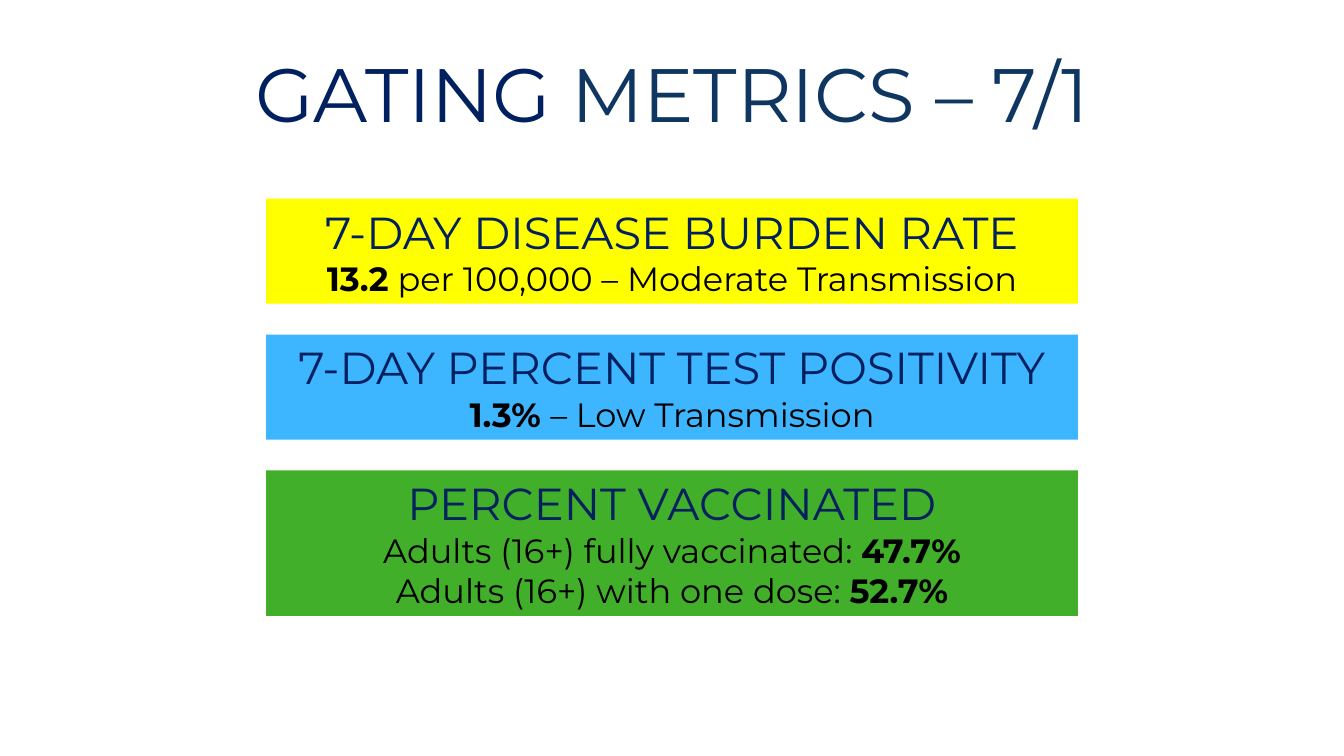
from pptx import Presentation
from pptx.dml.color import RGBColor
from pptx.enum.shapes import MSO_SHAPE
from pptx.enum.text import MSO_ANCHOR, PP_ALIGN
from pptx.util import Pt

RECT = MSO_SHAPE.RECTANGLE
CENTER = PP_ALIGN.CENTER
MIDDLE, BOTTOM = MSO_ANCHOR.MIDDLE, MSO_ANCHOR.BOTTOM

THEME = {
    "font": "Montserrat",
    "navy": "002060", "slate": "0F3660", "black": "000000",
    "yellow": "FFFF00", "blue": "3EB6FF", "green": "42AF2A",
    "title": 54, "heading": 32, "body": 24,
}

PANELS = [
    ("yellow", 75, "7-DAY DISEASE BURDEN RATE",
     [[("13.2", True), (" per 100,000 – Moderate Transmission", False)]]),
    ("blue", 75, "7-DAY PERCENT TEST POSITIVITY",
     [[("1.3% ", True), ("– Low Transmission", False)]]),
    ("green", 104, "PERCENT VACCINATED",
     [[("Adults (16+) fully vaccinated: ", False), ("47.7%", True)],
      [("Adults (16+) with one dose: ", False), ("52.7%", True)]]),
]
PANEL_LEFT, PANEL_TOP, PANEL_WIDTH, PANEL_GAP = 190, 142, 580, 22


def add_run(p, text, size, color, bold=False):
    r = p.add_run()
    r.text = text
    r.font.name = THEME["font"]
    r.font.size = Pt(THEME[size])
    r.font.bold = bold
    r.font.color.rgb = RGBColor.from_string(THEME[color])


prs = Presentation()
prs.slide_width, prs.slide_height = Pt(960), Pt(540)
s = prs.slides.add_slide(prs.slide_layouts[6])

title = s.shapes.add_textbox(Pt(0), Pt(6), Pt(960), Pt(97))
tf = title.text_frame
tf.word_wrap = True
tf.vertical_anchor = BOTTOM
p = tf.paragraphs[0]
p.alignment = CENTER
p.line_spacing = 0.9
add_run(p, "GATING", "title", "navy")
add_run(p, " METRICS – 7/1", "title", "slate")

top = PANEL_TOP
for fill, height, heading, lines in PANELS:
    sp = s.shapes.add_shape(RECT, Pt(PANEL_LEFT), Pt(top), Pt(PANEL_WIDTH), Pt(height))
    sp.shadow.inherit = False
    sp.fill.solid()
    sp.fill.fore_color.rgb = RGBColor.from_string(THEME[fill])
    sp.line.fill.background()
    tf = sp.text_frame
    tf.word_wrap = True
    tf.vertical_anchor = MIDDLE
    p = tf.paragraphs[0]
    p.alignment = CENTER
    add_run(p, heading, "heading", "navy")
    for line in lines:
        p = tf.add_paragraph()
        p.alignment = CENTER
        for text, bold in line:
            add_run(p, text, "body", "black", bold)
    top += height + PANEL_GAP

prs.save("out.pptx")
